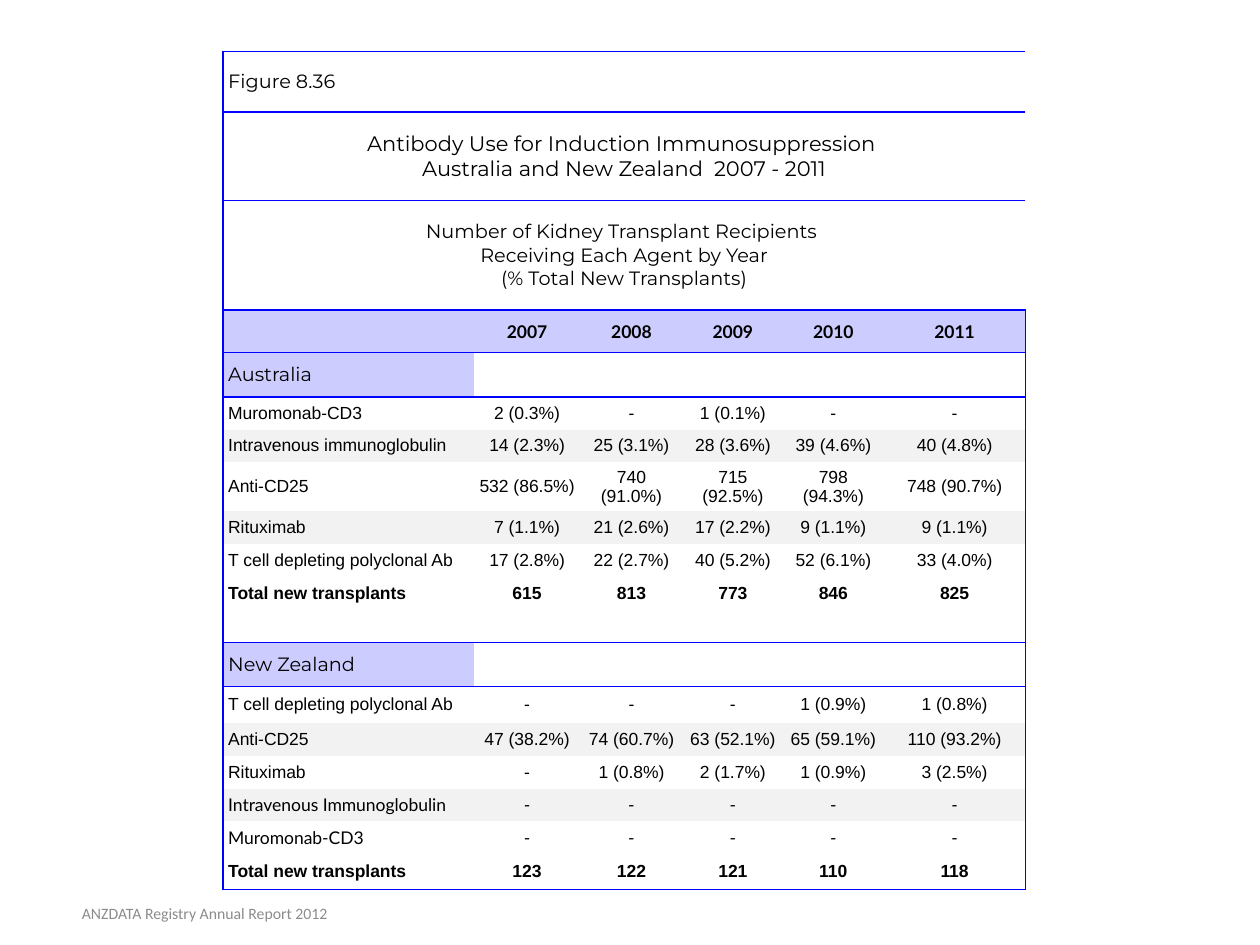
import dataclasses

import pptx
import pptx.dml.color
import pptx.enum.text
import pptx.oxml
import pptx.oxml.ns
import pptx.util

Cm = pptx.util.Cm
Pt = pptx.util.Pt
Align = pptx.enum.text.PP_ALIGN
Anchor = pptx.enum.text.MSO_ANCHOR

HUES = {
    "text": "000000",
    "rule": "0000FF",
    "head": "CCCCFF",
    "band": "F2F2F2",
    "foot": "8C8C8C",
}
PLAIN_GRID = "{2D5ABB26-0587-4C30-8999-92F81FD0307C}"
WIDTHS = (5.06, 2.13, 2.08, 2.01, 2.04, 2.85)
PAD = Cm(0.1)


@dataclasses.dataclass(frozen=True)
class Style:
    face: str
    size: int
    bold: bool = False
    after: int = 0


@dataclasses.dataclass(frozen=True)
class Row:
    height: float
    style: Style
    texts: tuple
    hue: str = ""
    tinted: int = 6
    spans: tuple = ()
    ruled: bool = False


TITLE = Style("Montserrat", 12)
LABEL = Style("Montserrat", 11)
YEAR = Style("Lato", 10, True)
DATA = Style("Arial", 10, False, 14)
NONE = Style("Lato", 10)
TOTAL = Style("Arial", 10, True, 14)
DASHES = ("-",) * 5

ROWS = (
    Row(1.22, LABEL, ("Figure 8.36",), spans=((0, 1), (2, 5)), ruled=True),
    Row(1.78, TITLE, ("Antibody Use for Induction Immunosuppression \n"
                      "Australia and New Zealand  2007 - 2011",),
        spans=((0, 5),), ruled=True),
    Row(2.21, LABEL, ("Number of Kidney Transplant Recipients \n"
                      "Receiving Each Agent by Year\n"
                      "(% Total New Transplants)",),
        spans=((0, 5),), ruled=True),
    Row(0.86, YEAR, ("", "2007", "2008", "2009", "2010", "2011"), "head", ruled=True),
    Row(0.89, LABEL, ("Australia",), "head", 1),
    Row(0.66, DATA, ("Muromonab-CD3", "2 (0.3%)", "-", "1 (0.1%)", "-", "-")),
    Row(0.66, DATA, ("Intravenous immunoglobulin", "14 (2.3%)", "25 (3.1%)",
                     "28 (3.6%)", "39 (4.6%)", "40 (4.8%)"), "band"),
    Row(0.66, DATA, ("Anti-CD25", "532 (86.5%)", "740 (91.0%)",
                     "715 (92.5%)", "798 (94.3%)", "748 (90.7%)")),
    Row(0.66, DATA, ("Rituximab", "7 (1.1%)", "21 (2.6%)",
                     "17 (2.2%)", "9 (1.1%)", "9 (1.1%)"), "band"),
    Row(0.66, DATA, ("T cell depleting polyclonal Ab", "17 (2.8%)", "22 (2.7%)",
                     "40 (5.2%)", "52 (6.1%)", "33 (4.0%)")),
    Row(0.66, TOTAL, ("Total new transplants", "615", "813", "773", "846", "825")),
    Row(0.66, DATA, (), ruled=True),
    Row(0.89, LABEL, ("New Zealand",), "head", 1),
    Row(0.74, DATA, ("T cell depleting polyclonal Ab", "-", "-", "-",
                     "1 (0.9%)", "1 (0.8%)")),
    Row(0.66, DATA, ("Anti-CD25", "47 (38.2%)", "74 (60.7%)",
                     "63 (52.1%)", "65 (59.1%)", "110 (93.2%)"), "band"),
    Row(0.66, DATA, ("Rituximab", "-", "1 (0.8%)", "2 (1.7%)",
                     "1 (0.9%)", "3 (2.5%)")),
    Row(0.66, NONE, ("Intravenous Immunoglobulin",) + DASHES, "band"),
    Row(0.66, NONE, ("Muromonab-CD3",) + DASHES),
    Row(0.71, TOTAL, ("Total new transplants", "123", "122", "121", "110", "118"),
        ruled=True),
)


def color(name: str) -> pptx.dml.color.RGBColor:
    return pptx.dml.color.RGBColor.from_string(HUES[name])


def dress(para, style: Style, hue: str, align) -> None:
    para.alignment = align
    if style.after:
        para.space_after = Pt(style.after)
    font = para.font
    font.name, font.size, font.bold = style.face, Pt(style.size), style.bold
    font.color.rgb = color(hue)


def edge(cell, sides: str) -> None:
    props = cell._tc.get_or_add_tcPr()
    for spot, side in enumerate(sides):
        props.insert(spot, pptx.oxml.parse_xml(
            f'<a:ln{side} {pptx.oxml.ns.nsdecls("a")} w="{Pt(1)}"><a:solidFill>'
            f'<a:srgbClr val="{HUES["rule"]}"/></a:solidFill></a:ln{side}>'))


def write(cell, text: str, style: Style, align) -> None:
    cell.margin_left = cell.margin_right = PAD
    cell.margin_top = cell.margin_bottom = PAD
    cell.vertical_anchor = Anchor.MIDDLE
    if not text:
        mark = cell.text_frame.paragraphs[0]._p.get_or_add_endParaRPr()
        mark.set("sz", "1000")
        return
    cell.text = text
    for para in cell.text_frame.paragraphs:
        dress(para, style, "text", align)


def fill_row(table, index: int) -> None:
    row = ROWS[index]
    last = len(WIDTHS) - 1
    table.rows[index].height = Cm(row.height)
    for col in range(last + 1):
        cell = table.cell(index, col)
        text = row.texts[col] if col < len(row.texts) else ""
        center = col > 0 or row.spans == ((0, last),)
        write(cell, text, row.style, Align.CENTER if center else Align.LEFT)
        if row.hue and col < row.tinted:
            cell.fill.solid()
            cell.fill.fore_color.rgb = color(row.hue)
        else:
            cell.fill.background()
        top = index == 0 or ROWS[index - 1].ruled
        edge(cell, "L" * (col == 0) + "R" * (col == last) + "T" * top + "B" * row.ruled)
    for start, end in row.spans:
        table.cell(index, start).merge(table.cell(index, end))


def add_grid(slide) -> None:
    frame = slide.shapes.add_table(
        len(ROWS), len(WIDTHS), Cm(4.5), Cm(1.04),
        Cm(sum(WIDTHS)), Cm(sum(row.height for row in ROWS)))
    table = frame.table
    table.first_row = table.horz_banding = False
    table._tbl.tblPr.find(pptx.oxml.ns.qn("a:tableStyleId")).text = PLAIN_GRID
    for col, width in zip(table.columns, WIDTHS):
        col.width = Cm(width)
    for index in range(len(ROWS)):
        fill_row(table, index)


def add_foot(slide) -> None:
    frame = slide.shapes.add_textbox(Cm(0.1), Cm(17.9), Cm(8.05), Cm(1.02)).text_frame
    frame.word_wrap = True
    frame.vertical_anchor = Anchor.MIDDLE
    frame.text = "ANZDATA Registry Annual Report 2012"
    dress(frame.paragraphs[0], Style("Calibri", 9), "foot", Align.CENTER)


def main() -> None:
    deck = pptx.Presentation()
    deck.slide_width, deck.slide_height = Cm(25.4), Cm(19.05)
    slide = deck.slides.add_slide(deck.slide_layouts[6])
    add_grid(slide)
    add_foot(slide)
    deck.save("out.pptx")


if __name__ == "__main__":
    main()
